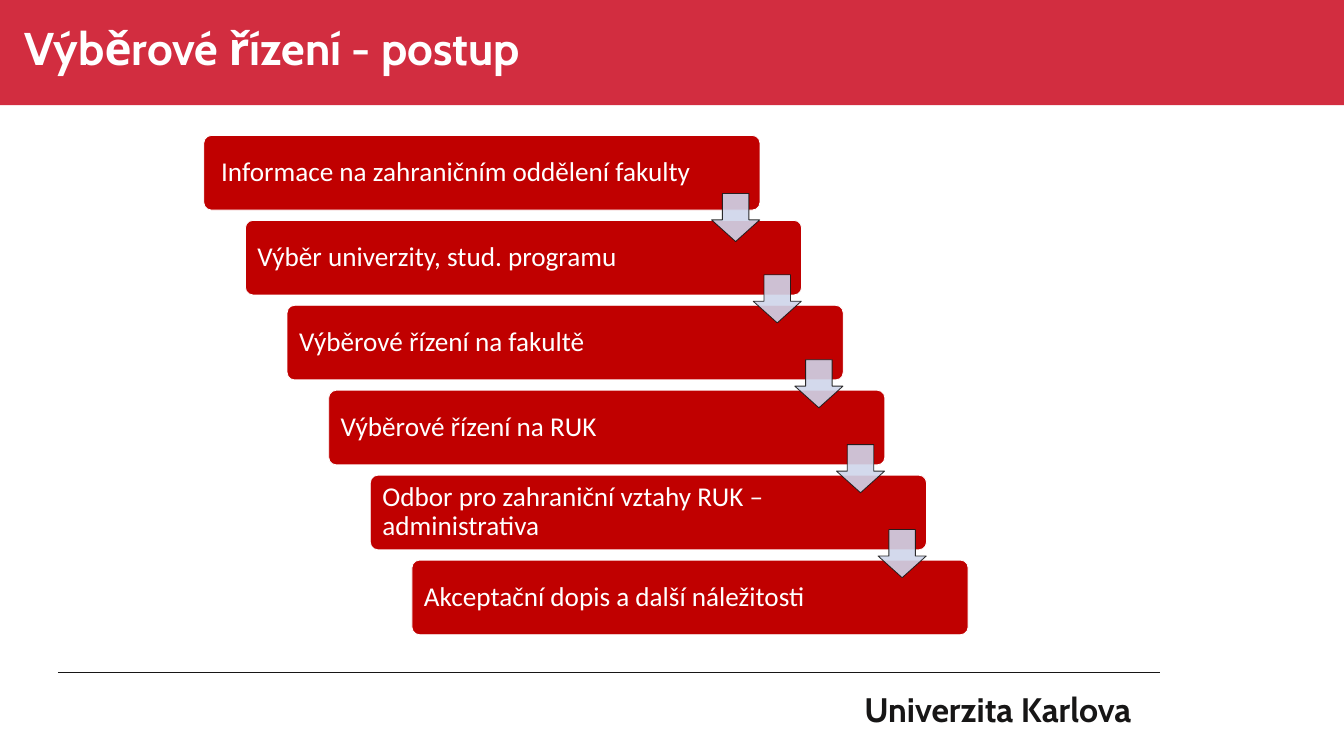
from dataclasses import dataclass

from lxml import etree
from pptx import Presentation
from pptx.dml.color import RGBColor
from pptx.enum import shapes, text
from pptx.oxml import ns
from pptx.util import Cm, Pt

COLORS = {
    "header": "D22D40",
    "step": "C00000",
    "arrow": "CFD5EA",
    "ink": "171616",
    "white": "FFFFFF",
}
STEP_LEFT, STEP_TOP = 8.47, 5.63
STEP_WIDTH, STEP_HEIGHT = 23.11, 3.1
SHIFT_X, SHIFT_Y = 1.73, 3.53
ARROW_SIZE, ARROW_OFFSET = 2.0, 21.1
ARROW_OPACITY = 90


@dataclass
class Step:
    label: str
    indent: float = 0.41
    arrow_drop: float = 2.26
    has_arrow: bool = True


STEPS = [
    Step("Informace na zahraničním oddělení fakulty", indent=0.63, arrow_drop=2.41),
    Step("Výběr univerzity, stud. programu"),
    Step("Výběrové řízení na fakultě"),
    Step("Výběrové řízení na RUK"),
    Step("Odbor pro zahraniční vztahy RUK – administrativa"),
    Step("Akceptační dopis a další náležitosti", has_arrow=False),
]


def color(name: str) -> RGBColor:
    return RGBColor.from_string(COLORS[name])


def write(shape, content: str, *, size: float, font: str, ink: str, bold: bool = False,
          anchor=text.MSO_ANCHOR.TOP, margins=(0, 0, 0, 0), spacing: float = 1.0) -> None:
    frame = shape.text_frame
    frame.word_wrap = True
    frame.vertical_anchor = anchor
    frame.margin_left, frame.margin_top, frame.margin_right, frame.margin_bottom = map(Cm, margins)
    paragraph = frame.paragraphs[0]
    paragraph.text = content
    paragraph.alignment = text.PP_ALIGN.LEFT
    paragraph.line_spacing = spacing
    paragraph.font.size = Pt(size)
    paragraph.font.name = font
    paragraph.font.bold = bold
    paragraph.font.color.rgb = color(ink)


def add_filled(slide, kind, left: float, top: float, width: float, height: float,
               fill: str, outline: str = "", adjustments=()):
    shape = slide.shapes.add_shape(kind, Cm(left), Cm(top), Cm(width), Cm(height))
    shape.shadow.inherit = False
    shape.fill.solid()
    shape.fill.fore_color.rgb = color(fill)
    if outline:
        shape.line.color.rgb = color(outline)
        shape.line.width = Pt(1)
    else:
        shape.line.fill.background()
    for index, value in enumerate(adjustments):
        shape.adjustments[index] = value
    return shape


def make_translucent(shape, percent: int) -> None:
    for tint in shape._element.spPr.iter(ns.qn("a:srgbClr")):
        etree.SubElement(tint, ns.qn("a:alpha"), val=str(percent * 1000))


def add_step(slide, step: Step, position: int) -> None:
    box = add_filled(slide, shapes.MSO_SHAPE.ROUNDED_RECTANGLE,
                     STEP_LEFT + position * SHIFT_X, STEP_TOP + position * SHIFT_Y,
                     STEP_WIDTH, STEP_HEIGHT, "step", "white", (0.1,))
    write(box, step.label, size=32, font="Calibri", ink="white", spacing=0.9,
          anchor=text.MSO_ANCHOR.MIDDLE, margins=(step.indent, 0.3, 2.1, 0.3))


def add_arrow(slide, step: Step, position: int) -> None:
    arrow = add_filled(slide, shapes.MSO_SHAPE.DOWN_ARROW,
                       STEP_LEFT + position * SHIFT_X + ARROW_OFFSET,
                       STEP_TOP + position * SHIFT_Y + step.arrow_drop,
                       ARROW_SIZE, ARROW_SIZE, "arrow", "ink", (0.55, 0.45))
    make_translucent(arrow, ARROW_OPACITY)


def add_footer(slide) -> None:
    rule = slide.shapes.add_connector(shapes.MSO_CONNECTOR.STRAIGHT,
                                      Cm(2.41), Cm(27.94), Cm(48.21), Cm(27.94))
    rule.line.color.rgb = color("ink")
    rule.line.width = Pt(0.5)
    etree.SubElement(rule._element.spPr, ns.qn("a:effectLst"))
    university = slide.shapes.add_textbox(Cm(35.92), Cm(28.6), Cm(12.95), Cm(2.29))
    write(university, "Univerzita Karlova", size=40, font="Cabin", ink="ink", bold=True)


def add_header(slide) -> None:
    add_filled(slide, shapes.MSO_SHAPE.RECTANGLE, 0, 0, 55.85, 4.37, "header")
    title = slide.shapes.add_textbox(Cm(0.76), Cm(0.94), Cm(24.61), Cm(3.35))
    write(title, "Výběrové řízení - postup", size=54, font="Cabin", ink="white", bold=True,
          margins=(0.25, 0.13, 0.25, 0.13), spacing=0.9)


def main() -> None:
    deck = Presentation()
    deck.slide_width, deck.slide_height = Cm(55.85), Cm(31.42)
    slide = deck.slides.add_slide(deck.slide_layouts[6])
    add_footer(slide)
    add_header(slide)
    for position, step in enumerate(STEPS):
        add_step(slide, step, position)
    for position, step in enumerate(STEPS):
        if step.has_arrow:
            add_arrow(slide, step, position)
    deck.save("out.pptx")


if __name__ == "__main__":
    main()
